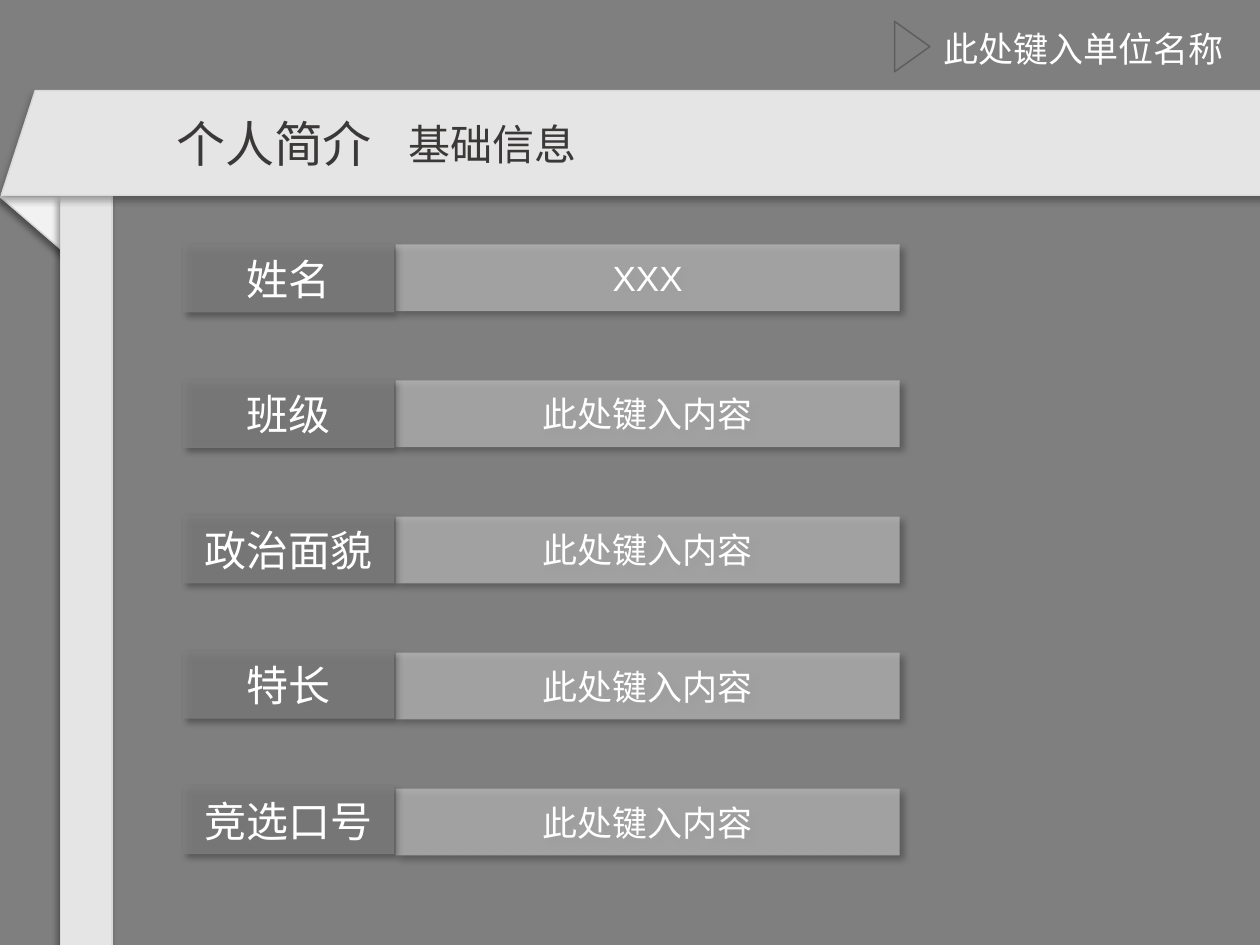
import pptx
import pptx.util
import pptx.dml.color
import pptx.enum.shapes
import pptx.enum.text
import pptx.oxml.ns
from lxml import etree

Inches = pptx.util.Inches
Pt = pptx.util.Pt
SHAPES = pptx.enum.shapes.MSO_SHAPE
ALIGN = pptx.enum.text.PP_ALIGN
ANCHOR = pptx.enum.text.MSO_ANCHOR
qn = pptx.oxml.ns.qn

COLORS = {
    "background": "7F7F7F",
    "arrow_edge": "5E5E5E",
    "fold": "F2F2F2",
    "ribbon": "E5E5E5",
    "ribbon_edge": "D9D9D9",
    "value": "BFBFBF",
    "title": "3B3838",
    "white": "FFFFFF",
    "shadow": "000000",
}
LATIN_FONT = "Arial"
CJK_FONT = "Noto Sans CJK SC"
ROWS = [
    ("姓名", "XXX"),
    ("班级", "此处键入内容"),
    ("政治面貌", "此处键入内容"),
    ("特长", "此处键入内容"),
    ("竞选口号", "此处键入内容"),
]


def rgb(name):
    return pptx.dml.color.RGBColor.from_string(COLORS[name])


def add_alpha(color_element, percent):
    etree.SubElement(color_element, qn("a:alpha"), val=str(percent * 1000))


def cast_shadow(shape, opacity, direction):
    effects = shape._element.spPr.find(qn("a:effectLst"))
    shadow = etree.SubElement(
        effects, qn("a:outerShdw"), blurRad=str(Pt(4)), dist=str(Pt(3)),
        dir=str(direction * 60000), algn="ctr", rotWithShape="0")
    color = etree.SubElement(shadow, qn("a:srgbClr"), val=COLORS["shadow"])
    add_alpha(color, opacity)


def paint(shape, fill, edge=None, opacity=None):
    shape.shadow.inherit = False
    shape.fill.solid()
    shape.fill.fore_color.rgb = rgb(fill)
    if opacity:
        add_alpha(shape._element.spPr.find(qn("a:solidFill"))[0], opacity)
    if edge:
        shape.line.color.rgb = rgb(edge)
        shape.line.width = Pt(0.85)
    else:
        shape.line.fill.background()


def add_figure(slide, kind, box, fill, edge=None, opacity=None, rotation=0):
    figure = slide.shapes.add_shape(kind, *map(Inches, box))
    figure.rotation = rotation
    paint(figure, fill, edge, opacity)
    return figure


def write(shape, text, size, color, align, anchor, font=LATIN_FONT):
    frame = shape.text_frame
    for name, value in {"word_wrap": True, "vertical_anchor": anchor}.items():
        setattr(frame, name, value)
    paragraph = frame.paragraphs[0]
    paragraph.alignment = align
    run = paragraph.add_run()
    run.text = text
    for name, value in {"size": Pt(size), "name": font}.items():
        setattr(run.font, name, value)
    run.font.color.rgb = rgb(color)
    etree.SubElement(run._r.get_or_add_rPr(), qn("a:ea"), typeface=CJK_FONT)


def add_caption(slide, box, text, size, color, align=ALIGN.LEFT, font=LATIN_FONT):
    caption = slide.shapes.add_textbox(*map(Inches, box))
    write(caption, text, size, color, align, ANCHOR.TOP, font)
    caption.text_frame.auto_size = pptx.enum.text.MSO_AUTO_SIZE.SHAPE_TO_FIT_TEXT


def add_ribbon(slide):
    fold = add_figure(slide, SHAPES.RIGHT_TRIANGLE, (0, 1.56, 0.59, 0.51),
                      "fold", "ribbon_edge", rotation=180)
    column = add_figure(slide, SHAPES.RECTANGLE, (0.48, 1.56, 0.41, 6.08),
                        "ribbon", "ribbon_edge")
    outline = slide.shapes.build_freeform(Inches(0.28), Inches(0.72))
    corners = [(10.39, 0.72), (10.39, 1.55), (0.01, 1.55)]
    outline.add_line_segments([(Inches(x), Inches(y)) for x, y in corners], close=True)
    banner = outline.convert_to_shape()
    paint(banner, "ribbon", "ribbon_edge")
    for part, opacity in ((fold, 40), (column, 40), (banner, 30)):
        cast_shadow(part, opacity, 135)


def add_field(slide, box, text, size, fill, opacity):
    field = add_figure(slide, SHAPES.RECTANGLE, box, fill, opacity=opacity)
    cast_shadow(field, 40, 45)
    write(field, text, size, "white", ALIGN.CENTER, ANCHOR.MIDDLE)


def main():
    deck = pptx.Presentation()
    deck.slide_width, deck.slide_height = Inches(10), Inches(7.5)
    slide = deck.slides.add_slide(deck.slide_layouts[6])
    slide.background.fill.solid()
    slide.background.fill.fore_color.rgb = rgb("background")

    add_caption(slide, (6.53, 0.17, 3.28, 0.44), "此处键入单位名称", 20, "white",
                ALIGN.RIGHT, CJK_FONT)
    add_figure(slide, SHAPES.ISOSCELES_TRIANGLE, (7.04, 0.23, 0.4, 0.28),
               "background", "arrow_edge", rotation=90)
    add_ribbon(slide)

    for index, (label, value) in enumerate(ROWS):
        value_top = 1.94 + 1.08 * index
        label_top = 1.94 + 1.075 * index
        add_field(slide, (3.14, value_top, 4, 0.53), value, 20, "value", 70)
        add_field(slide, (1.45, label_top, 1.68, 0.54), label, 24, "background", 80)

    add_caption(slide, (1.3, 0.85, 2.38, 0.57), "个人简介", 28, "title")
    add_caption(slide, (3.14, 0.89, 1.89, 0.5), "基础信息", 24, "title")
    deck.save("out.pptx")


if __name__ == "__main__":
    main()
